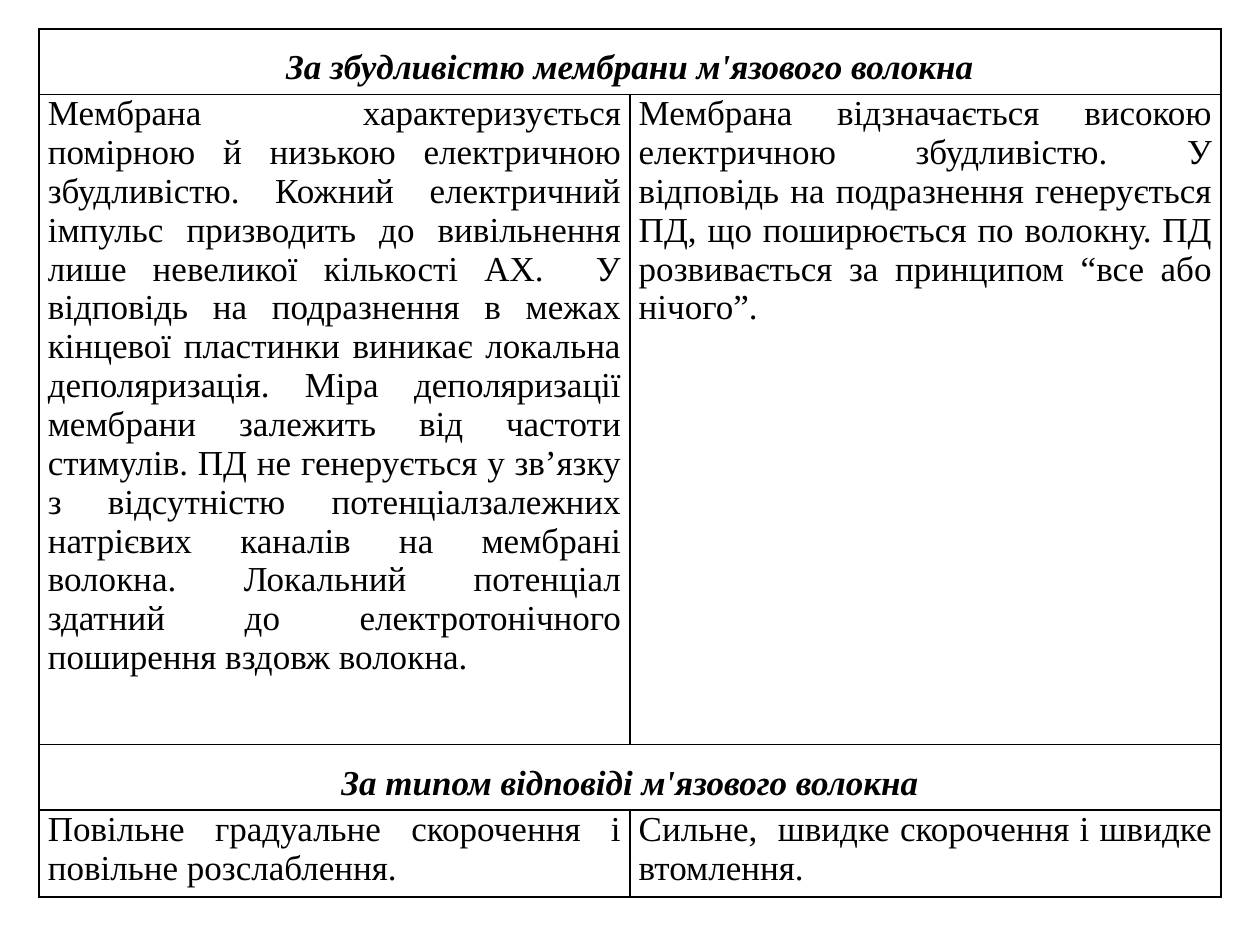
from lxml import etree
from pptx import Presentation
from pptx.dml.color import RGBColor
from pptx.enum.text import MSO_ANCHOR, PP_ALIGN
from pptx.oxml.ns import qn
from pptx.util import Inches, Pt

CENTER, JUSTIFY = PP_ALIGN.CENTER, PP_ALIGN.JUSTIFY
TOP = MSO_ANCHOR.TOP
BLACK = RGBColor(0x00, 0x00, 0x00)

# Content: a row with one text is a heading across both columns
ROWS = [
    (0.52, ["За збудливістю мембрани м'язового волокна"]),
    (5.16, [
        "Мембрана характеризується помірною й низькою електричною збудливістю. "
        "Кожний електричний імпульс призводить до вивільнення лише невеликої "
        "кількості АХ.  У відповідь на подразнення в межах кінцевої пластинки "
        "виникає локальна деполяризація. Міра деполяризації мембрани залежить "
        "від частоти стимулів. ПД не генерується у зв’язку з відсутністю "
        "потенціалзалежних натрієвих каналів на мембрані волокна. Локальний "
        "потенціал здатний до електротонічного поширення вздовж волокна.",
        "Мембрана відзначається високою електричною збудливістю. У відповідь "
        "на подразнення генерується ПД, що поширюється по волокну. ПД "
        "розвивається за принципом “все або нічого”.",
    ]),
    (0.52, ["За типом відповіді м'язового волокна"]),
    (0.69, [
        "Повільне градуальне скорочення і повільне розслаблення.",
        "Сильне,  швидке скорочення і швидке втомлення.",
    ]),
]

SLIDE_WIDTH, SLIDE_HEIGHT = Inches(10), Inches(7.5)
LEFT, TABLE_TOP = Inches(0.31), Inches(0.23)
COLUMNS = 2
CELL_FORMAT = {
    "margin_left": Inches(0.07), "margin_right": Inches(0.07),
    "margin_top": 0, "margin_bottom": 0, "vertical_anchor": TOP,
}
FONT_FORMAT = {"name": "Times New Roman", "size": Pt(20)}
HEADING_FORMAT = {"alignment": CENTER, "line_spacing": 1.5}
BODY_FORMAT = {"alignment": JUSTIFY}


def apply_format(target, values):
    for name, value in values.items():
        setattr(target, name, value)


def add_borders(cell):
    properties = cell._tc.get_or_add_tcPr()
    for position, side in enumerate(("a:lnL", "a:lnR", "a:lnT", "a:lnB")):
        line = etree.Element(qn(side), w=str(Pt(1)))
        fill = etree.SubElement(line, qn("a:solidFill"))
        etree.SubElement(fill, qn("a:srgbClr"), val=str(BLACK))
        properties.insert(position, line)


def write_text(cell, text, is_heading):
    paragraph = cell.text_frame.paragraphs[0]
    apply_format(paragraph, HEADING_FORMAT if is_heading else BODY_FORMAT)
    run = paragraph.add_run()
    run.text = text
    apply_format(run.font, FONT_FORMAT)
    apply_format(run.font, {"bold": is_heading, "italic": is_heading})
    run.font.color.rgb = BLACK


presentation = Presentation()
presentation.slide_width, presentation.slide_height = SLIDE_WIDTH, SLIDE_HEIGHT
slide = presentation.slides.add_slide(presentation.slide_layouts[6])

# Table centred across the slide, with equal columns
table_height = Inches(sum(height for height, _ in ROWS))
table = slide.shapes.add_table(
    len(ROWS), COLUMNS, LEFT, TABLE_TOP, SLIDE_WIDTH - 2 * LEFT, table_height
).table
apply_format(table, {"first_row": False, "horz_banding": False})

# Rows of headings and comparisons
for row_index, (height, texts) in enumerate(ROWS):
    table.rows[row_index].height = Inches(height)
    is_heading = len(texts) == 1
    if is_heading:
        table.cell(row_index, 0).merge(table.cell(row_index, COLUMNS - 1))
    for column in range(COLUMNS):
        cell = table.cell(row_index, column)
        apply_format(cell, CELL_FORMAT)
        cell.fill.background()
        add_borders(cell)
        if column < len(texts):
            write_text(cell, texts[column], is_heading)

presentation.save("out.pptx")
